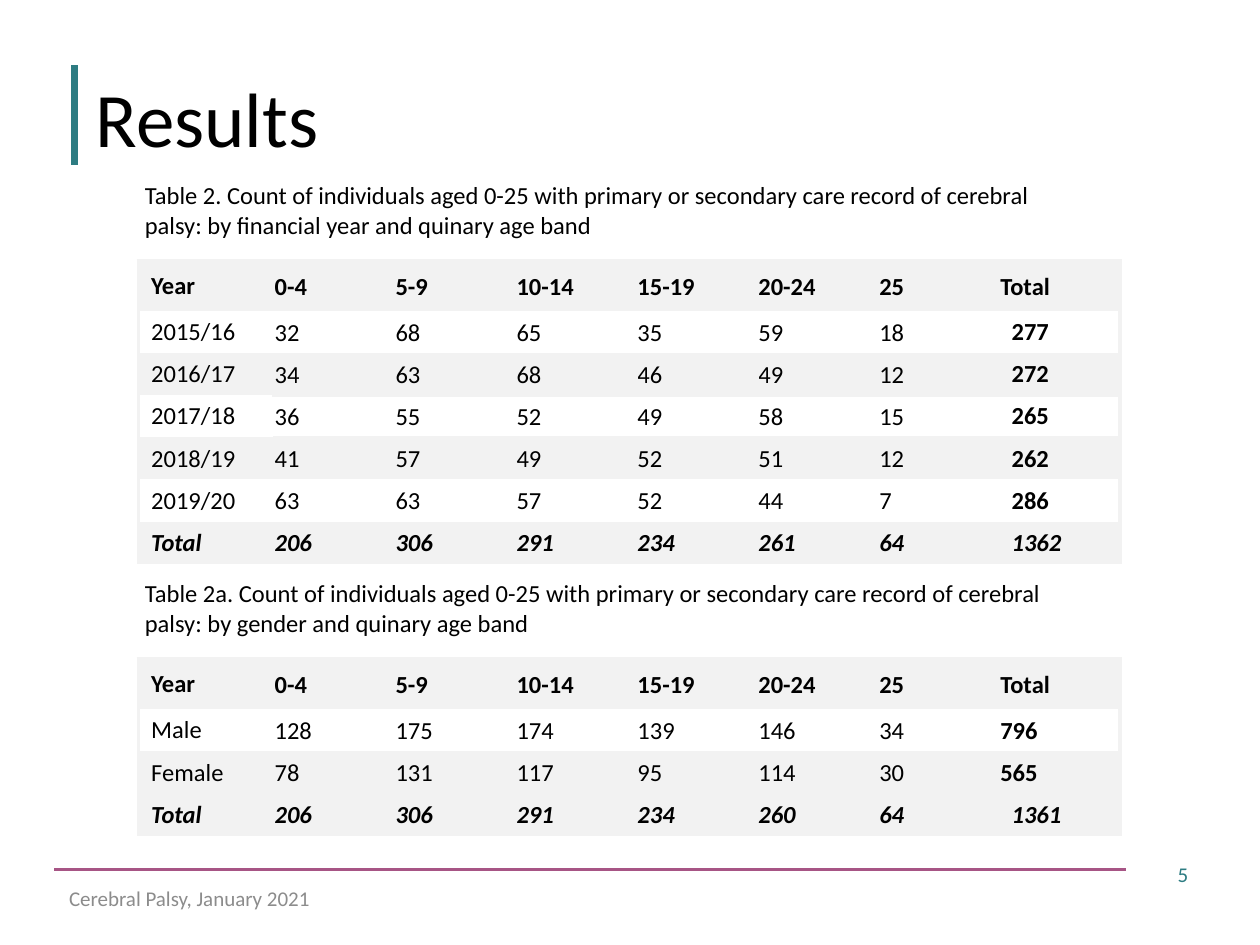
import pptx
import pptx.dml.color
import pptx.enum.shapes
import pptx.enum.text
import pptx.oxml
import pptx.oxml.ns
import pptx.util
from pptx.util import Inches

COLORS = {"black": "000000", "white": "FFFFFF", "band": "F2F2F2",
          "teal": "2D7C82", "plum": "A75585", "grey": "8C8C8C"}
FONT = "Calibri"
NO_GRID_STYLE = "{2D5ABB26-0587-4C30-8999-92F81FD0307C}"
HEADER = ["Year", "0-4", "5-9", "10-14", "15-19", "20-24", "25", "Total"]
YEAR_ROWS = [
    ["2015/16", 32, 68, 65, 35, 59, 18, 277],
    ["2016/17", 34, 63, 68, 46, 49, 12, 272],
    ["2017/18", 36, 55, 52, 49, 58, 15, 265],
    ["2018/19", 41, 57, 49, 52, 51, 12, 262],
    ["2019/20", 63, 63, 57, 52, 44, 7, 286],
    ["Total", 206, 306, 291, 234, 261, 64, 1362],
]
GENDER_ROWS = [
    ["Male", 128, 175, 174, 139, 146, 34, 796],
    ["Female", 78, 131, 117, 95, 114, 30, 565],
    ["Total", 206, 306, 291, 234, 260, 64, 1361],
]
CAPTION = ("{}. Count of individuals aged 0-25 with primary or secondary care "
           "record of cerebral palsy: by {} and quinary age band")


def rgb(name):
    """Return the named colour."""
    return pptx.dml.color.RGBColor.from_string(COLORS[name])


def write(frame, text, size, color="black", align="LEFT", bold=False, italic=False):
    """Write one run into the first paragraph of a text frame."""
    paragraph = frame.paragraphs[0]
    paragraph.alignment = getattr(pptx.enum.text.PP_ALIGN, align)
    run = paragraph.add_run()
    run.text = text
    run.font.name = FONT
    run.font.size = pptx.util.Pt(size)
    run.font.bold = bold
    run.font.italic = italic
    run.font.color.rgb = rgb(color)


def add_rule(slide, start, end, color, width):
    """Draw a straight line without shadow."""
    line = slide.shapes.add_connector(
        pptx.enum.shapes.MSO_CONNECTOR.STRAIGHT, *map(Inches, start + end))
    line.line.color.rgb = rgb(color)
    line.line.width = pptx.util.Pt(width)
    properties = line._element.spPr
    properties.append(pptx.oxml.parse_xml(
        f"<a:effectLst {pptx.oxml.ns.nsdecls('a')}/>"))


def add_label(slide, box, text, size, color, align="LEFT"):
    """Add a vertically centred text box."""
    frame = slide.shapes.add_textbox(*map(Inches, box)).text_frame
    frame.word_wrap = True
    frame.vertical_anchor = pptx.enum.text.MSO_ANCHOR.MIDDLE
    write(frame, text, size, color, align)


def add_caption(slide, box, text):
    """Add a table caption on a white rectangle."""
    shape = slide.shapes.add_shape(
        pptx.enum.shapes.MSO_SHAPE.RECTANGLE, *map(Inches, box))
    shape.shadow.inherit = False
    shape.fill.solid()
    shape.fill.fore_color.rgb = rgb("white")
    shape.line.fill.background()
    frame = shape.text_frame
    frame.word_wrap = True
    frame.vertical_anchor = pptx.enum.text.MSO_ANCHOR.TOP
    frame.margin_left = frame.margin_right = Inches(0.2)
    frame.margin_top = frame.margin_bottom = 0
    write(frame, text, 14)


def add_borders(cell, sides):
    """Draw band-coloured borders on the given sides of a cell."""
    properties = cell._tc.get_or_add_tcPr()
    for side in "LRTB":
        if side in sides:
            properties.append(pptx.oxml.parse_xml(
                f'<a:ln{side} {pptx.oxml.ns.nsdecls("a")} w="{pptx.util.Pt(2.25)}">'
                f'<a:solidFill><a:srgbClr val="{COLORS["band"]}"/></a:solidFill>'
                f'</a:ln{side}>'))


def border_sides(row, column, last_column):
    """Return the sides of a cell that carry a border."""
    sides = {"T"} if row == 0 else set()
    if column == 0:
        sides.add("L")
    if column == last_column:
        sides.add("R")
    if row == 2:
        sides.update("LR" if column == 0 else "LRB")
    if row == 3 and column > 0:
        sides.add("T")
    return sides


def add_count_table(slide, box, body, indented_totals):
    """Add a banded table of counts with a header and a total row."""
    rows = [HEADER] + body
    last_row, last_column = len(rows) - 1, len(HEADER) - 1
    table = slide.shapes.add_table(
        len(rows), len(HEADER), *map(Inches, box)).table
    table._tbl.tblPr[0].text = NO_GRID_STYLE
    for index, column in enumerate(table.columns):
        column.width = Inches(0.96 if index else 1.07)
    for index, row in enumerate(table.rows):
        row.height = Inches(0.33 if index else 0.4)
    for r, values in enumerate(rows):
        for c, value in enumerate(values):
            cell = table.cell(r, c)
            add_borders(cell, border_sides(r, c, last_column))
            if r % 2 == 0 or r == last_row:
                cell.fill.solid()
                cell.fill.fore_color.rgb = rgb("band")
            else:
                cell.fill.background()
            cell.vertical_anchor = pptx.enum.text.MSO_ANCHOR.MIDDLE
            if c and not (c == last_column and r in indented_totals):
                cell.margin_left = cell.margin_right = cell.margin_top = Inches(0.01)
                cell.margin_bottom = 0
            write(cell.text_frame, str(value), 14,
                  bold=r in (0, last_row) or c == last_column,
                  italic=r == last_row)


def add_table_block(slide, left, top, caption, body, indented_totals):
    """Place a caption with its table below it."""
    add_count_table(slide, (left + 0.15, top + 0.64, 7.8, 0.4 + 0.33 * len(body)),
                    body, indented_totals)
    add_caption(slide, (left, top, 7.9, 0.47), caption)


def add_title(slide, left, top):
    """Place the title beside its accent bar."""
    add_rule(slide, (left, top), (left, top + 0.79), "teal", 4)
    add_label(slide, (left + 0.07, top - 0.22, 8.59, 1.25), "Results", 44, "black")


def add_footer(slide, left, top):
    """Place the footer rule, text and page number."""
    add_rule(slide, (left, top), (left + 8.51, top), "plum", 2)
    add_label(slide, (left + 0.02, top + 0.03, 3.17, 0.4),
              "Cerebral Palsy, January 2021", 12, "grey")
    add_label(slide, (left + 6.77, top - 0.16, 2.33, 0.4), "5", 12, "teal", "RIGHT")


def main():
    """Build and save the presentation."""
    presentation = pptx.Presentation()
    presentation.slide_width = Inches(10)
    presentation.slide_height = Inches(7.5)
    slide = presentation.slides.add_slide(presentation.slide_layouts[6])
    add_title(slide, 0.59, 0.52)
    add_footer(slide, 0.43, 6.9)
    add_table_block(slide, 0.95, 1.43, CAPTION.format("Table 2", "financial year"),
                    YEAR_ROWS, range(1, 7))
    add_table_block(slide, 0.95, 4.59, CAPTION.format("Table 2a", "gender"),
                    GENDER_ROWS, [3])
    presentation.save("out.pptx")


if __name__ == "__main__":
    main()
